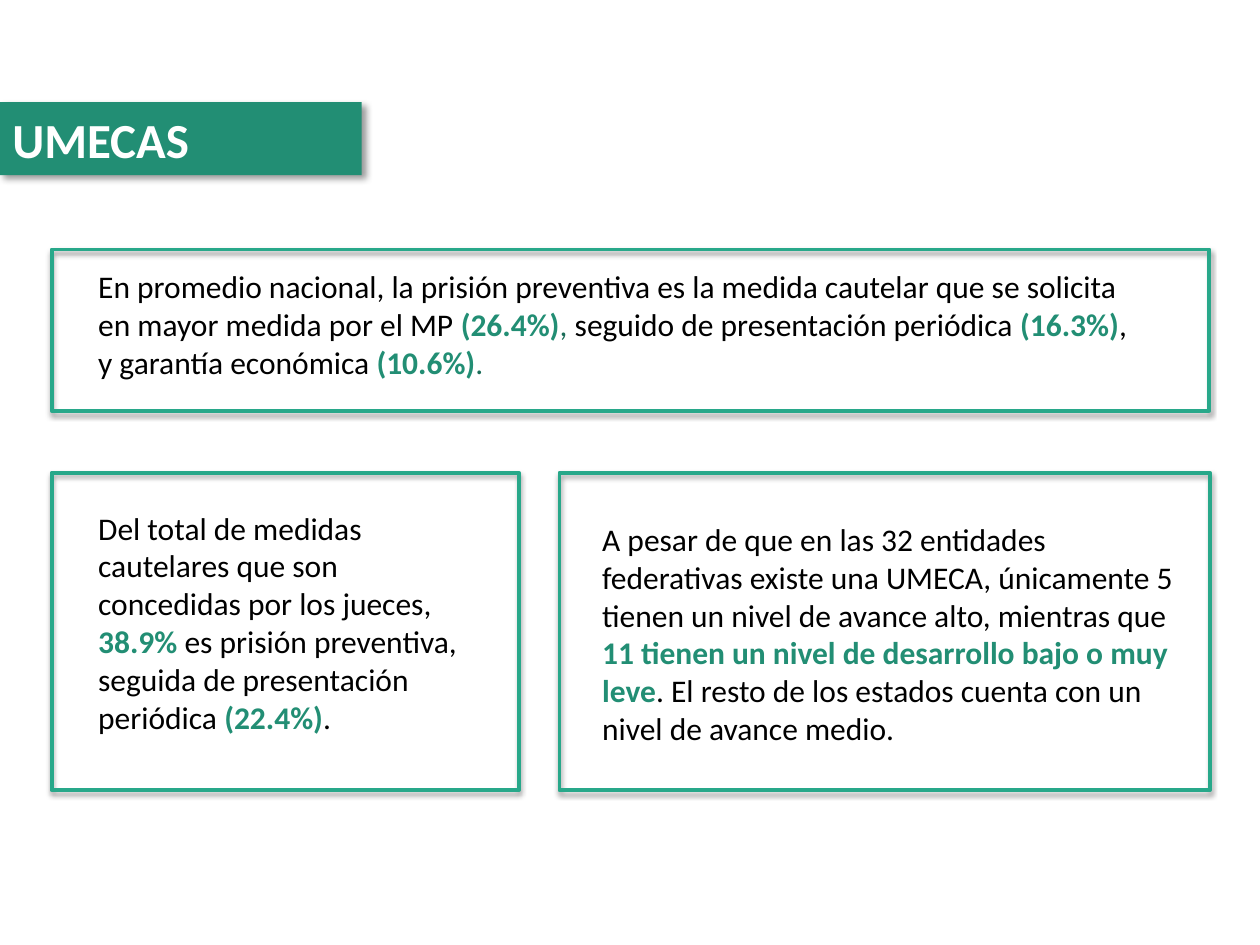
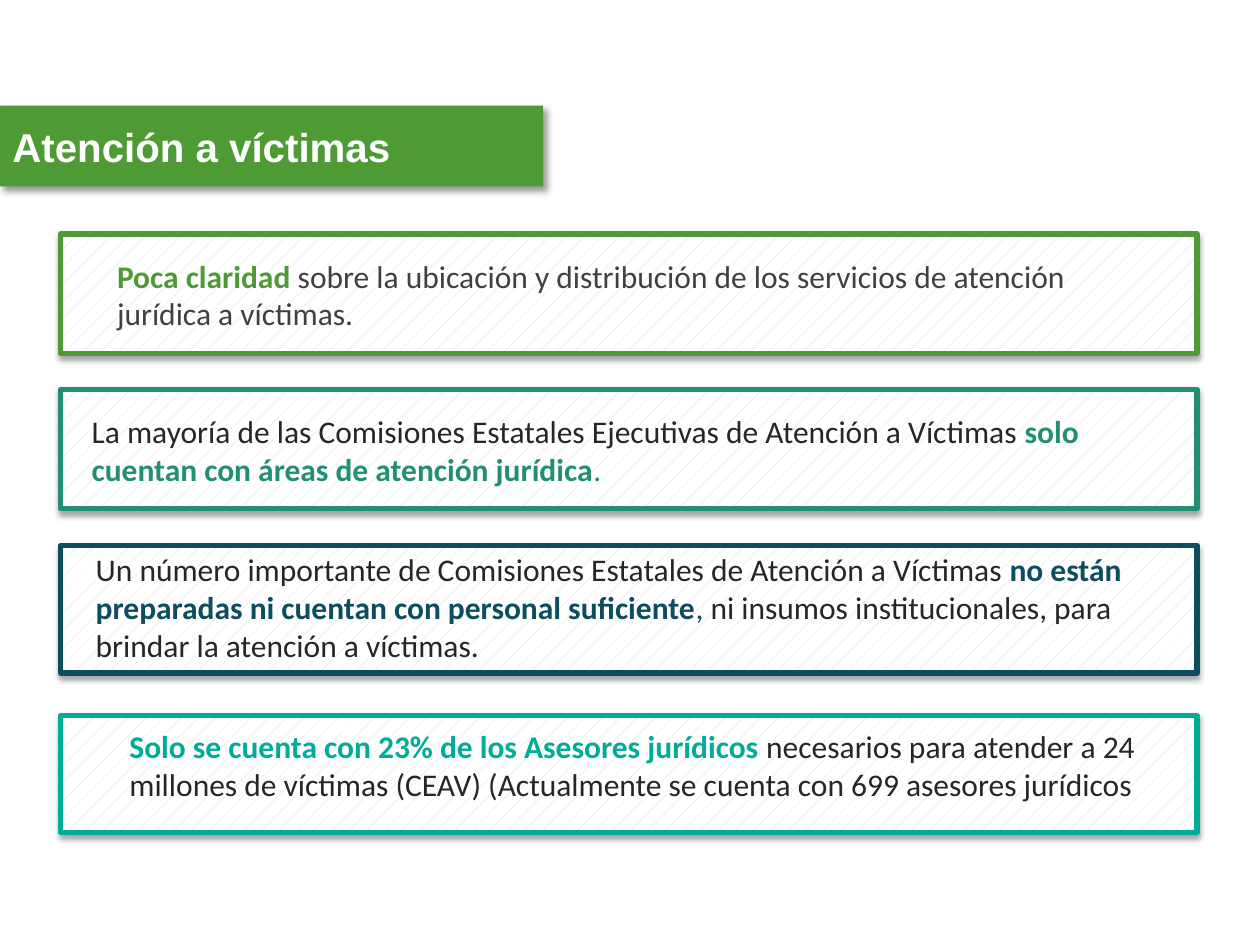
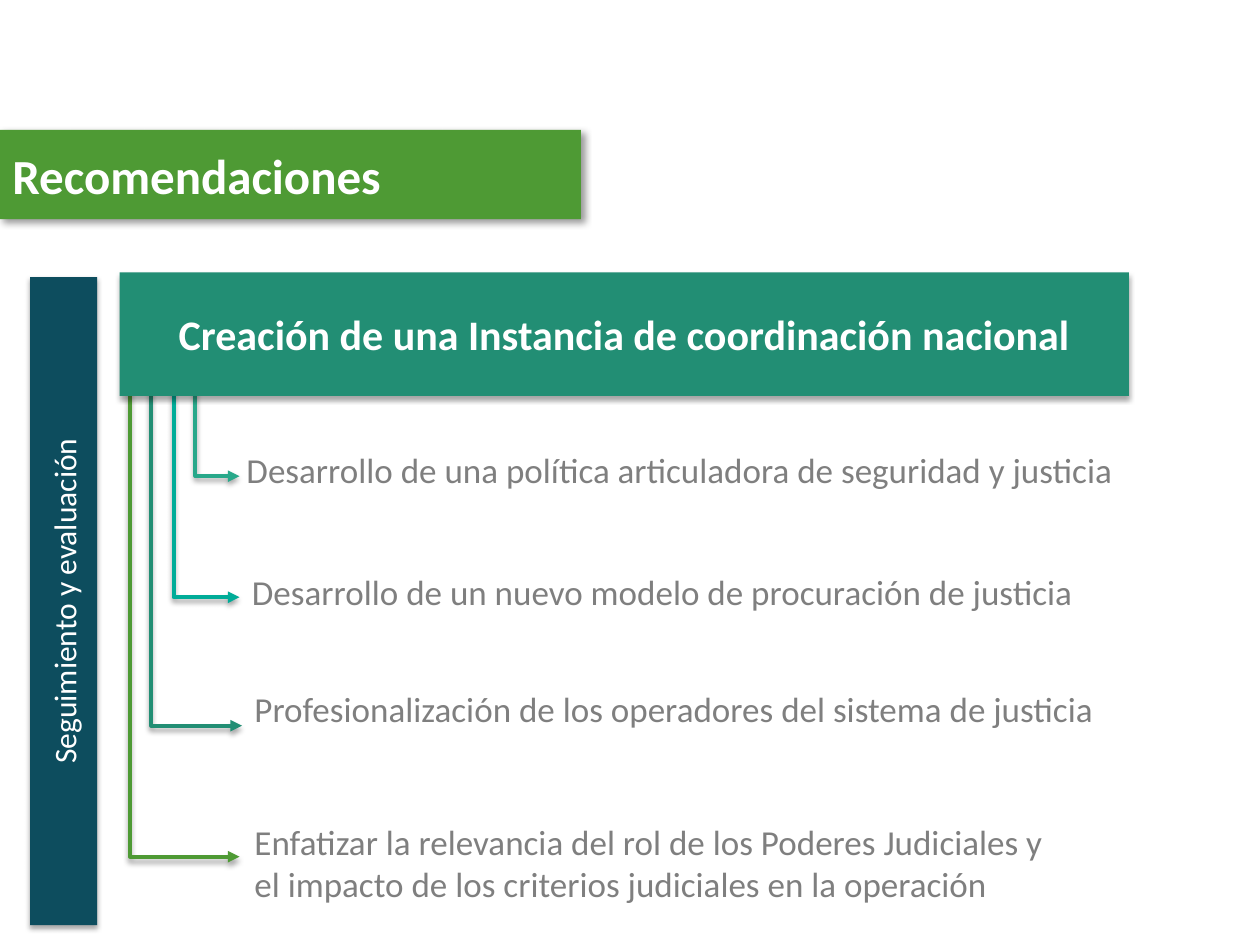
from dataclasses import dataclass

from lxml import etree
from pptx import Presentation
from pptx.dml.color import RGBColor as RGB
from pptx.enum.dml import MSO_PATTERN as PATTERN
from pptx.enum.shapes import MSO_SHAPE as SHAPE
from pptx.enum.text import MSO_ANCHOR as ANCHOR, PP_ALIGN as ALIGN
from pptx.oxml.ns import qn
from pptx.util import Cm, Pt


@dataclass(frozen=True)
class Theme:
    green: str = "4E9A34"
    teal: str = "228E74"
    deep_teal: str = "1A6C58"
    mint: str = "28A88A"
    aqua: str = "00AC98"
    navy: str = "0D4D5E"
    white: str = "FFFFFF"
    black: str = "000000"
    ink: str = "262626"
    charcoal: str = "404040"
    gray: str = "7F7F7F"
    hatch: str = "D9D9D9"
    font: str = "Calibri"
    alt_font: str = "Arial"
    title: int = 28
    alt_title: int = 23
    header: int = 24
    item: int = 20
    body: int = 18
    # Shadows: opacity %, blur pt, distance pt, direction in degrees
    title_shadow: tuple = (40, 4, 3, 45)
    box_shadow: tuple = (35, 3.1, 1.8, 90)


T = Theme()


def style(sp, fill=None, line=None, weight=2.25, shadow=T.box_shadow):
    """Set the fill, outline and outer shadow of a shape."""
    if fill:
        sp.fill.solid()
        sp.fill.fore_color.rgb = RGB.from_string(fill)
    else:
        sp.fill.background()
    if line:
        sp.line.color.rgb = RGB.from_string(line)
        sp.line.width = Pt(weight)
    else:
        sp.line.fill.background()
    sp.shadow.inherit = False
    alpha, blur, dist, angle = shadow
    effects = sp.element.spPr.find(qn("a:effectLst"))
    outer = etree.SubElement(effects, qn("a:outerShdw"), blurRad=str(Pt(blur)),
                             dist=str(Pt(dist)), dir=str(angle * 60000), rotWithShape="0")
    color = etree.SubElement(outer, qn("a:srgbClr"), val=T.black)
    etree.SubElement(color, qn("a:alpha"), val=str(alpha * 1000))


def write(sp, *paragraphs, size=T.body, color=T.black, bold=False, font=T.font,
          align=ALIGN.LEFT, anchor=ANCHOR.TOP):
    """Write paragraphs made of runs: plain text or (text, color, bold)."""
    tf = sp.text_frame
    tf.word_wrap = True
    tf.vertical_anchor = anchor
    for i, runs in enumerate(paragraphs):
        p = tf.add_paragraph() if i else tf.paragraphs[0]
        p.alignment = align
        for run in runs:
            text, run_color, run_bold = (run, color, bold) if isinstance(run, str) else run
            r = p.add_run()
            r.text = text
            r.font.name = font
            r.font.size = Pt(size)
            r.font.bold = run_bold
            r.font.color.rgb = RGB.from_string(run_color)


prs = Presentation()
prs.slide_width, prs.slide_height = Cm(25.4), Cm(19.05)

# Slides with their title bands: text, shape, top, width, height, fill, size, font
titles = [
    ("UMECAS", SHAPE.RECTANGLE, 2.06, 7.29, 1.47, T.teal, T.title, T.font),
    ("Atención a víctimas", SHAPE.PENTAGON, 2.13, 10.95, 1.63, T.green, T.alt_title, T.alt_font),
    ("Recomendaciones", SHAPE.RECTANGLE, 2.62, 11.71, 1.8, T.green, T.title, T.font),
]
slides = []
for text, kind, top, width, height, fill, size, font in titles:
    s = prs.slides.add_slide(prs.slide_layouts[6])
    band = s.shapes.add_shape(kind, 0, Cm(top), Cm(width), Cm(height))
    if kind == SHAPE.PENTAGON:
        band.adjustments[0] = 0
    style(band, fill=fill, shadow=T.title_shadow)
    write(band, [text], size=size, color=T.white, bold=True, font=font, anchor=ANCHOR.MIDDLE)
    slides.append(s)
umecas, victims, advice = slides

# Slide 1: framed findings (frame, text area, runs)
findings = [
    ((1.04, 5.03, 23.34, 3.25), (1.73, 5.26, 21.62, 2.57), [
        "En promedio nacional, la prisión preventiva es la medida cautelar que se solicita "
        "en mayor medida por el MP ",
        ("(26.4%)", T.teal, True), (", ", T.deep_teal, False),
        "seguido de presentación periódica ", ("(16.3%)", T.teal, True),
        ", y garantía económica ", ("(10.6%)", T.teal, True), (".", T.deep_teal, False)]),
    ((1.04, 9.53, 9.42, 6.4), (1.73, 10.13, 8.1, 4.88), [
        "Del total de medidas cautelares que son concedidas por los jueces, ",
        ("38.9% ", T.teal, True),
        "es prisión preventiva, seguida de presentación periódica ",
        ("(22.4%)", T.teal, True), "."]),
    ((11.28, 9.53, 13.11, 6.4), (11.89, 10.36, 12.01, 4.88), [
        "A pesar de que en las 32 entidades federativas existe una UMECA, únicamente 5 "
        "tienen un nivel de avance alto, mientras que ",
        ("11 tienen un nivel de desarrollo bajo o muy leve", T.teal, True),
        ". El resto de los estados cuenta con un nivel de avance medio."]),
]
for frame, area, runs in findings:
    style(umecas.shapes.add_shape(SHAPE.RECTANGLE, *map(Cm, frame)), line=T.mint)
    write(umecas.shapes.add_textbox(*map(Cm, area)), runs)

# Slide 2: hatched boxes (top, height, outline, text area, text color, runs)
problems = [
    (4.72, 2.41, T.green, (2.11, 5.05, 20.78, 1.8), T.charcoal, [
        ("Poca claridad ", T.green, True),
        "sobre la ubicación y distribución de los servicios de atención jurídica a víctimas."]),
    (7.85, 2.41, T.teal, (1.6, 8.18, 22.07, 1.8), T.ink, [
        "La mayoría de las Comisiones Estatales Ejecutivas de Atención a Víctimas ",
        ("solo cuentan con áreas de atención jurídica", T.teal, True), (".", T.teal, False)]),
    (11, 2.57, T.navy, (1.68, 10.97, 21.74, 2.57), T.ink, [
        "Un número importante de Comisiones Estatales de Atención a Víctimas ",
        ("no están preparadas ni cuentan con personal suficiente", T.navy, True),
        (", ", T.navy, False),
        "ni insumos institucionales, para brindar la atención a víctimas."]),
    (14.43, 2.36, T.aqua, (2.36, 14.53, 21.77, 1.8), T.ink, [
        ("Solo se cuenta con 23% de los Asesores jurídicos ", T.aqua, True),
        "necesarios para atender a 24 millones de víctimas (CEAV) "
        "(Actualmente se cuenta con 699 asesores jurídicos"]),
]
for top, height, outline, area, color, runs in problems:
    box = victims.shapes.add_shape(SHAPE.RECTANGLE, Cm(1.22), Cm(top), Cm(22.91), Cm(height))
    style(box, line=outline, weight=3)
    box.fill.patterned()
    box.fill.pattern = PATTERN.PERCENT_5
    box.fill.fore_color.rgb = RGB.from_string(T.hatch)
    box.fill.back_color.rgb = RGB.from_string(T.white)
    write(victims.shapes.add_textbox(*map(Cm, area)), runs, color=color)

# Slide 3: elbow arrows and items (arrow x, tip x, tip y, color, text x, text y, lines)
items = [
    (3.94, 4.83, 9.6, T.mint, 4.72, 8.92,
     ["Desarrollo de una política articuladora de seguridad y justicia"]),
    (3.5, 4.83, 12.04, T.aqua, 4.83, 11.38,
     ["Desarrollo de un nuevo modelo de procuración de justicia"]),
    (3.05, 4.88, 14.63, T.teal, 4.88, 13.74,
     ["Profesionalización de los operadores del sistema de justicia"]),
    (2.62, 4.83, 17.27, T.green, 4.88, 16.41,
     ["Enfatizar la relevancia del rol de los Poderes Judiciales y",
      "el impacto de los criterios judiciales en la operación"]),
]
for x, tip_x, tip_y, color, text_x, text_y, lines in items:
    builder = advice.shapes.build_freeform(Cm(x), Cm(7.62))
    builder.add_line_segments([(Cm(x), Cm(tip_y)), (Cm(tip_x), Cm(tip_y))], close=False)
    arrow = builder.convert_to_shape()
    style(arrow, line=color)
    etree.SubElement(arrow.element.spPr.find(qn("a:ln")), qn("a:tailEnd"), type="triangle")
    area = advice.shapes.add_textbox(Cm(text_x), Cm(text_y), Cm(20), Cm(0.28 + 0.84 * len(lines)))
    write(area, *[[line] for line in lines], size=T.item, color=T.gray)

# Slide 3: header and vertical side bar
header = advice.shapes.add_shape(SHAPE.RECTANGLE, Cm(2.41), Cm(5.49), Cm(20.35), Cm(2.49))
style(header, fill=T.teal)
write(header, ["Creación de una Instancia de coordinación nacional"], size=T.header,
      color=T.white, bold=True, align=ALIGN.CENTER, anchor=ANCHOR.MIDDLE)
side_bar = advice.shapes.add_shape(SHAPE.RECTANGLE, Cm(0.61), Cm(5.59), Cm(1.35), Cm(13.06))
style(side_bar, fill=T.navy)
write(side_bar, ["Seguimiento y evaluación"], color=T.white, align=ALIGN.CENTER,
      anchor=ANCHOR.MIDDLE)
side_bar.element.txBody.find(qn("a:bodyPr")).set("vert", "vert270")

prs.save("out.pptx")
